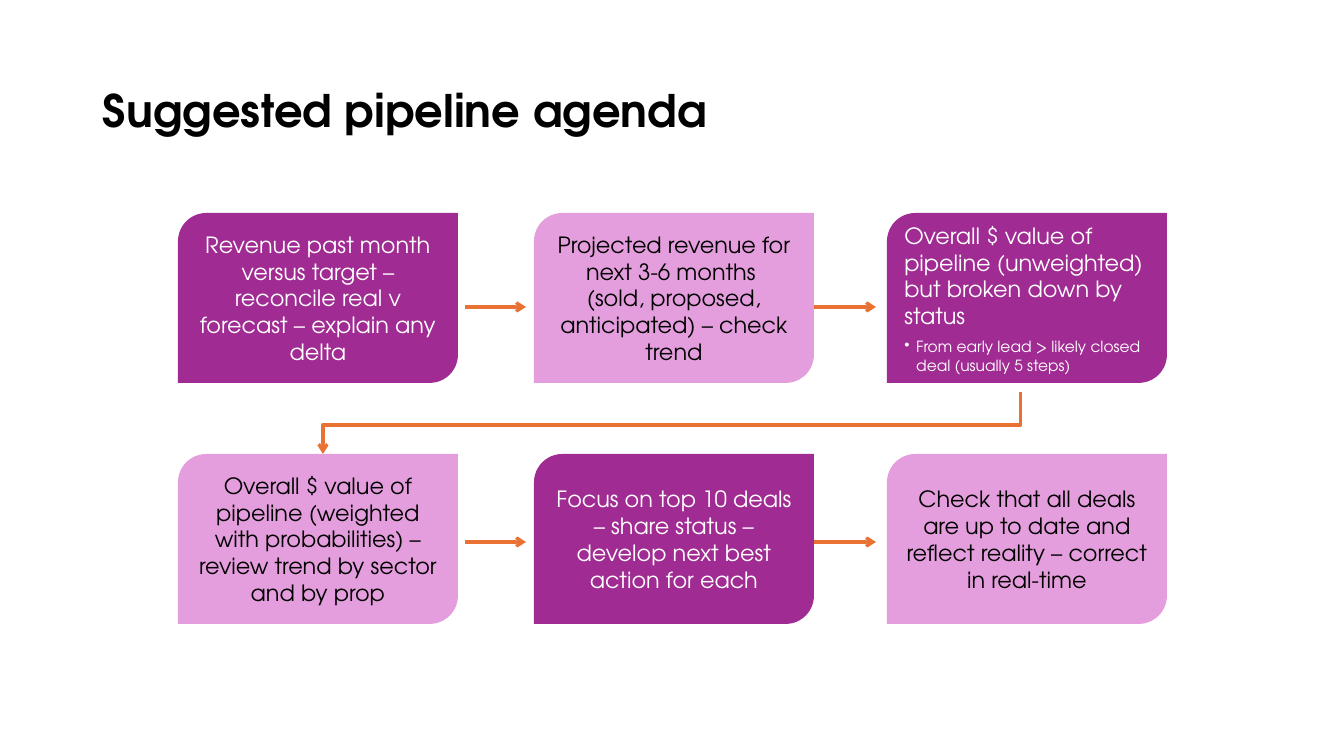
from lxml.etree import SubElement
from pptx import Presentation
from pptx.dml.color import RGBColor
from pptx.enum.shapes import MSO_CONNECTOR, MSO_SHAPE
from pptx.enum.text import MSO_ANCHOR, PP_ALIGN
from pptx.oxml.ns import qn
from pptx.util import Pt

PX = 914400 / 100.8
FONT = "TeX Gyre Adventor"
PURPLE, PINK, ORANGE = "A02B93", "E59EDD", "E97132"
WHITE, BLACK = "FFFFFF", "000000"


def px(*lengths):
    """Turn pixel lengths into EMU."""
    return [round(length * PX) for length in lengths]


def add_run(paragraph, text, size, color, bold=False):
    run = paragraph.add_run()
    run.text = text
    run.font.name = FONT
    run.font.size = Pt(size)
    run.font.bold = bold
    run.font.color.rgb = RGBColor.from_string(color)


prs = Presentation()
prs.slide_width, prs.slide_height = px(1344, 756)
slide = prs.slides.add_slide(prs.slide_layouts[6])
shapes = slide.shapes

# Arrows: one between each pair of neighbours, one down to the second row
arrows = []
for y in (307, 542):
    for start, end in ((465, 526), (814, 876)):
        arrows.append(shapes.add_connector(MSO_CONNECTOR.STRAIGHT, *px(start, y, end, y)))

row_turn = shapes.build_freeform(1021, 392, scale=PX)
row_turn.add_line_segments([(1021, 425), (323, 425), (323, 454)], close=False)
turn_arrow = row_turn.convert_to_shape()
turn_arrow.fill.background()
arrows.append(turn_arrow)

for arrow in arrows:
    arrow.line.color.rgb = RGBColor.from_string(ORANGE)
    arrow.line.width = Pt(2.25)
    SubElement(arrow.line._get_or_add_ln(), qn("a:tailEnd"), type="arrow")
    SubElement(arrow._element.spPr, qn("a:effectLst"))

# Title
title = shapes.add_textbox(*px(93, 40, 1159, 146)).text_frame
title.word_wrap = True
title.vertical_anchor = MSO_ANCHOR.MIDDLE
title.paragraphs[0].line_spacing = 0.9
add_run(title.paragraphs[0], "Suggested pipeline agenda", 32, BLACK, bold=True)

# Agenda steps, in reading order; each inner list holds the lines of one step
COLUMNS, ROWS = (178, 534, 887), (213, 454)
steps = [
    ["Revenue past month versus target – reconcile real v forecast – explain any delta"],
    ["Projected revenue for next 3-6 months ", "(sold, proposed, anticipated) – check trend"],
    ["Overall $ value of pipeline (unweighted) but broken down by status"],
    ["Overall $ value of pipeline (weighted with probabilities) – review trend by sector and by prop"],
    ["Focus on top 10 deals – share status – develop next best action for each"],
    ["Check that all deals are up to date and reflect reality – correct in real-time"],
]
STATUS_STEP = 2

for index, lines in enumerate(steps):
    row, column = divmod(index, len(COLUMNS))
    fill, ink = (PINK, BLACK) if index % 2 else (PURPLE, WHITE)
    box = shapes.add_shape(MSO_SHAPE.ROUND_2_DIAG_RECTANGLE,
                           *px(COLUMNS[column], ROWS[row], 280, 170))
    box.shadow.inherit = False
    box.fill.solid()
    box.fill.fore_color.rgb = RGBColor.from_string(fill)
    box.line.fill.background()

    frame = box.text_frame
    frame.word_wrap = True
    frame.vertical_anchor = MSO_ANCHOR.MIDDLE
    frame.margin_left, frame.margin_right, frame.margin_top, frame.margin_bottom = px(9, 9, 9, 9)
    step = frame.paragraphs[0]
    step.alignment = PP_ALIGN.LEFT if index == STATUS_STEP else PP_ALIGN.CENTER
    for number, line in enumerate(lines):
        if number:
            step.add_line_break()
        add_run(step, line, 16, ink)

    if index == STATUS_STEP:
        step.space_after = Pt(5.6)
        detail = frame.add_paragraph()
        detail.alignment = PP_ALIGN.LEFT
        detail.level = 1
        indent, = px(12)
        properties = detail._p.get_or_add_pPr()
        properties.set("marL", str(indent))
        properties.set("indent", str(-indent))
        SubElement(properties, qn("a:buChar"), char="•")
        add_run(detail, "From early lead > likely closed deal (usually 5 steps)", 11, ink)

prs.save("out.pptx")
